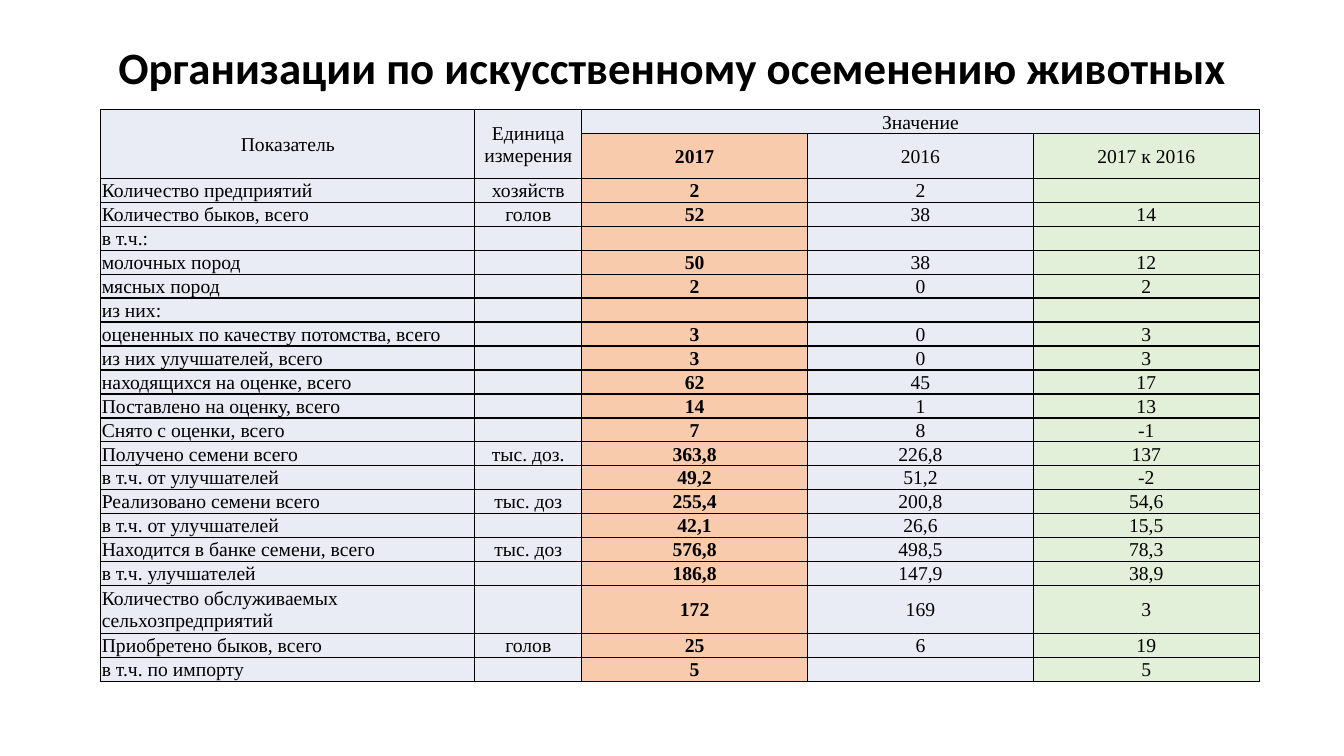
"""Build the slide on organisations for artificial insemination of livestock."""
import pptx
import pptx.util
import pptx.dml.color
import pptx.enum.text
import lxml.etree

Inches = pptx.util.Inches
Pt = pptx.util.Pt
RGBColor = pptx.dml.color.RGBColor
Align = pptx.enum.text.PP_ALIGN
MIDDLE = pptx.enum.text.MSO_ANCHOR.MIDDLE

BLACK = RGBColor(0x00, 0x00, 0x00)
BLUE = RGBColor(0xE9, 0xEB, 0xF5)
PEACH = RGBColor(0xF8, 0xCB, 0xAD)
GREEN = RGBColor(0xE2, 0xF0, 0xD9)
FILLS = [BLUE, BLUE, PEACH, BLUE, GREEN]
WIDTHS = [3.71, 1.06, 2.24, 2.24, 2.24]
PITCH = 5 / 21
SIZE = Pt(14)
FACE = "Times New Roman"
NS = "http://schemas.openxmlformats.org/drawingml/2006/main"

ROWS = [
    ("Показатель", "Единица измерения", "Значение", "", ""),
    ("", "", "2017", "2016", "2017 к 2016"),
    ("Количество предприятий", "хозяйств", "2", "2", ""),
    ("Количество быков, всего", "голов", "52", "38", "14"),
    ("в т.ч.:", "", "", "", ""),
    ("молочных пород", "", "50", "38", "12"),
    ("мясных пород", "", "2", "0", "2"),
    ("из них:", "", "", "", ""),
    ("оцененных по качеству потомства, всего", "", "3", "0", "3"),
    ("из них улучшателей, всего", "", "3", "0", "3"),
    ("находящихся на оценке, всего", "", "62", "45", "17"),
    ("Поставлено на оценку, всего", "", "14", "1", "13"),
    ("Снято с оценки, всего", "", "7", "8", "-1"),
    ("Получено семени всего", "тыс. доз.", "363,8", "226,8", "137"),
    ("в т.ч. от улучшателей", "", "49,2", "51,2", "-2"),
    ("Реализовано семени всего", "тыс. доз", "255,4", "200,8", "54,6"),
    ("в т.ч. от улучшателей", "", "42,1", "26,6", "15,5"),
    ("Находится в банке семени, всего", "тыс. доз", "576,8", "498,5", "78,3"),
    ("в т.ч. улучшателей", "", "186,8", "147,9", "38,9"),
    ("Количество обслуживаемых сельхозпредприятий", "", "172", "169", "3"),
    ("Приобретено быков, всего", "голов", "25", "6", "19"),
    ("в т.ч. по импорту", "", "5", "", "5"),
]
HEIGHTS = [PITCH] * len(ROWS)
HEIGHTS[1] = 0.44
HEIGHTS[19] = 2 * PITCH


def add_node(parent, tag, **attrs):
    """Add a drawing element below the parent."""
    return lxml.etree.SubElement(parent, f"{{{NS}}}{tag}", **attrs)


def frame(cell):
    """Draw thin black borders on all four sides of a cell."""
    props = cell._tc.get_or_add_tcPr()
    for side in ("lnL", "lnR", "lnT", "lnB"):
        line = add_node(props, side, w=str(Pt(1)))
        add_node(add_node(line, "solidFill"), "srgbClr", val=str(BLACK))


deck = pptx.Presentation()
deck.slide_width = Inches(13.33)
deck.slide_height = Inches(7.5)
slide = deck.slides.add_slide(deck.slide_layouts[5])

title = slide.shapes.title
title.left, title.top = Inches(0.92), Inches(0.4)
title.width, title.height = Inches(11.5), Inches(0.59)
title.text_frame.text = "Организации по искусственному осеменению животных"
title.text_frame.vertical_anchor = MIDDLE
head = title.text_frame.paragraphs[0]
head.alignment = Align.CENTER
head.line_spacing = 0.9
font = head.runs[0].font
font.name, font.size, font.bold = "Calibri", Pt(32), True
font.color.rgb = BLACK

table = slide.shapes.add_table(
    len(ROWS), len(WIDTHS), Inches(1), Inches(1.09),
    Inches(sum(WIDTHS)), Inches(sum(HEIGHTS))).table
table.first_row = table.horz_banding = False
for col, width in zip(table.columns, WIDTHS):
    col.width = Inches(width)

for r, (row, texts) in enumerate(zip(table.rows, ROWS)):
    row.height = Inches(HEIGHTS[r])
    for c, (cell, text) in enumerate(zip(row.cells, texts)):
        frame(cell)
        cell.fill.solid()
        cell.fill.fore_color.rgb = FILLS[c] if r else BLUE
        cell.vertical_anchor = MIDDLE
        cell.margin_left = cell.margin_right = cell.margin_top = Inches(0.01)
        cell.margin_bottom = 0
        cell.text_frame.text = text
        para = cell.text_frame.paragraphs[0]
        para.alignment = Align.LEFT if c == 0 and r > 1 else Align.CENTER
        for run in para.runs:
            run.font.name, run.font.size = FACE, SIZE
            run.font.bold = c == 2 and r > 0
            run.font.color.rgb = BLACK
        if not text:
            end = add_node(para._p, "endParaRPr", sz=str(int(SIZE.pt * 100)))
            add_node(end, "latin", typeface=FACE)

for c in range(2):
    table.cell(0, c).merge(table.cell(1, c))
table.cell(0, 2).merge(table.cell(0, 4))

deck.save("out.pptx")
